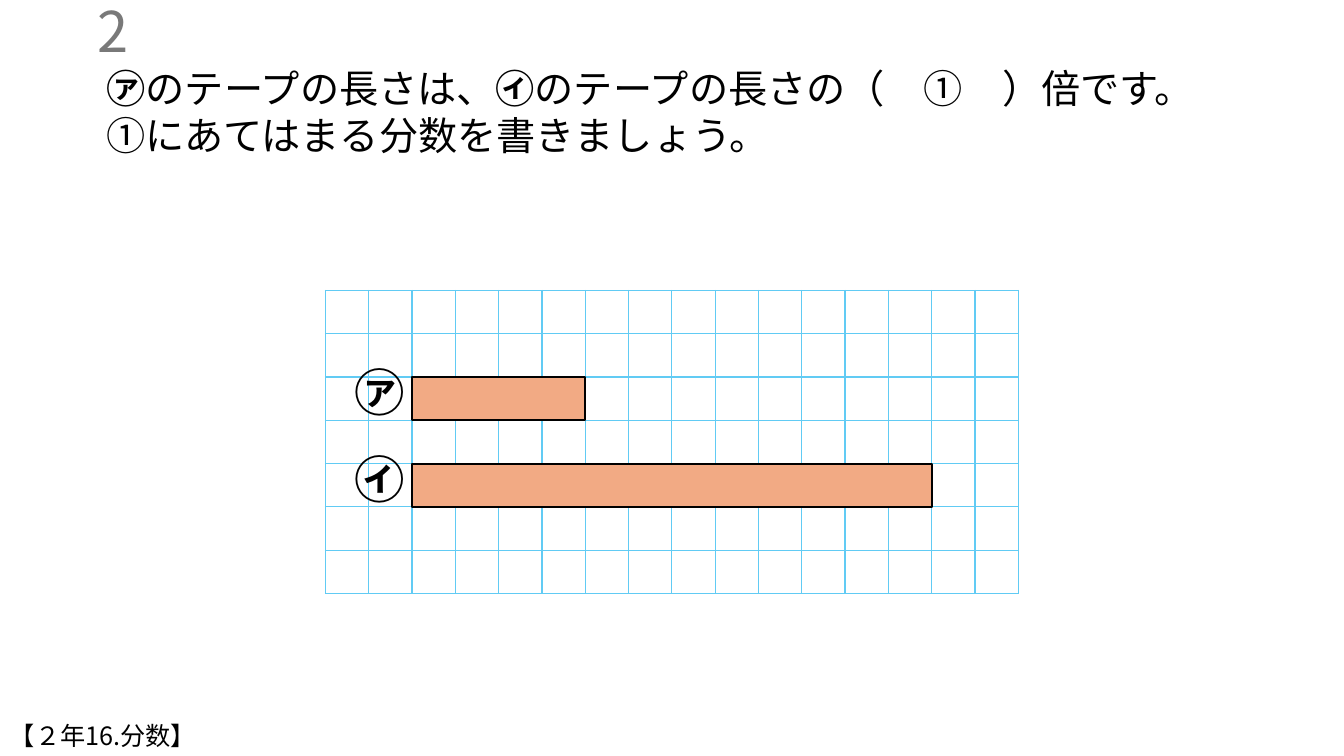
from dataclasses import dataclass

from lxml import etree
from pptx import Presentation
from pptx import util as u
from pptx.dml.color import RGBColor
from pptx.enum import shapes, text
from pptx.oxml import ns

FONT = "Noto Sans CJK JP"
BLACK, GREY, GRID_BLUE, TAPE_ORANGE = "000000", "797979", "61CBF4", "F2AA84"
CELL, COLUMNS, ROWS = 30.95, 16, 7
GRID_LEFT, GRID_TOP = 232.5, 207.4
TAPE_COLUMN = 2


@dataclass
class Label:
    lines: list[str]
    left: float
    top: float
    width: float
    height: float
    size: float
    bold: str = ""  # characters set in bold


@dataclass
class Tape:
    name: str
    row: int
    cells: int


def colour(value: str) -> RGBColor:
    return RGBColor.from_string(value)


def split_bold(line: str, bold: str) -> list[str]:
    """Cut a line into pieces, with each bold character on its own."""
    for mark in bold:
        line = line.replace(mark, f"\n{mark}\n")
    return [piece for piece in line.split("\n") if piece]


def add_label(slide, label: Label, ink: str = BLACK):
    frame = slide.shapes.add_textbox(
        u.Pt(label.left), u.Pt(label.top), u.Pt(label.width), u.Pt(label.height)
    ).text_frame
    frame.word_wrap = True
    frame.text = "\n".join(label.lines)
    for paragraph, line in zip(frame.paragraphs, label.lines):
        paragraph.line_spacing = u.Pt(label.size * 1.2)
        pieces = split_bold(line, label.bold)
        paragraph.text = pieces[0]
        for piece in pieces[1:]:
            paragraph.add_run().text = piece
        for run in paragraph.runs:
            run.font.name = FONT
            run.font.size = u.Pt(label.size)
            run.font.bold = run.text in list(label.bold)
            run.font.color.rgb = colour(ink)
            east_asian = etree.SubElement(run.font._element, ns.qn("a:ea"))
            east_asian.set("typeface", FONT)
    return frame


def add_grid(slide) -> None:
    table = slide.shapes.add_table(
        ROWS, COLUMNS, u.Pt(GRID_LEFT), u.Pt(GRID_TOP),
        u.Pt(CELL * COLUMNS), u.Pt(CELL * ROWS),
    ).table
    table.first_row = table.horz_banding = False
    for track in table.columns:
        track.width = u.Pt(CELL)
    for track in table.rows:
        track.height = u.Pt(CELL)
    for cell in table.iter_cells():
        cell.margin_left = cell.margin_right = 0
        cell.margin_top = cell.margin_bottom = 0
        cell.fill.background()
        properties = cell._tc.get_or_add_tcPr()
        for index, side in enumerate(("lnL", "lnR", "lnT", "lnB")):
            border = etree.Element(ns.qn(f"a:{side}"), w=str(u.Pt(1)))
            fill = etree.SubElement(border, ns.qn("a:solidFill"))
            etree.SubElement(fill, ns.qn("a:srgbClr"), val=GRID_BLUE)
            properties.insert(index, border)


def add_tape(slide, tape: Tape) -> None:
    left = GRID_LEFT + TAPE_COLUMN * CELL
    top = GRID_TOP + tape.row * CELL
    add_label(slide, Label([tape.name], left - 48.2, top - 14.6, 46, 51, 36, tape.name))
    strip = slide.shapes.add_shape(
        shapes.MSO_SHAPE.RECTANGLE,
        u.Pt(left), u.Pt(top), u.Pt(tape.cells * CELL), u.Pt(CELL),
    )
    strip.shadow.inherit = False
    strip.fill.solid()
    strip.fill.fore_color.rgb = colour(TAPE_ORANGE)
    strip.line.color.rgb = colour(BLACK)
    strip.line.width = u.Pt(1.5)


def main() -> None:
    deck = Presentation()
    deck.slide_width, deck.slide_height = u.Pt(960), u.Pt(540)
    slide = deck.slides.add_slide(deck.slide_layouts[6])

    # Question and its number
    question = [
        "㋐のテープの長さは、㋑のテープの長さの（　①　）倍です。",
        "①にあてはまる分数を書きましょう。",
    ]
    add_label(slide, Label(question, 69.1, 42.5, 830, 75, 28, "㋐㋑"))
    number = add_label(slide, Label(["2"], -117.4, 7.2, 216, 28.8, 40), GREY)
    number.vertical_anchor = text.MSO_ANCHOR.MIDDLE
    number.paragraphs[0].alignment = text.PP_ALIGN.RIGHT
    number.paragraphs[0].line_spacing = None

    # Squared paper with the two tapes
    add_grid(slide)
    for tape in (Tape("㋐", 2, 4), Tape("㋑", 4, 12)):
        add_tape(slide, tape)

    # Unit name
    add_label(slide, Label(["【２年16.分数】"], 0, 511.2, 539.3, 28.8, 18))

    deck.save("out.pptx")


if __name__ == "__main__":
    main()
